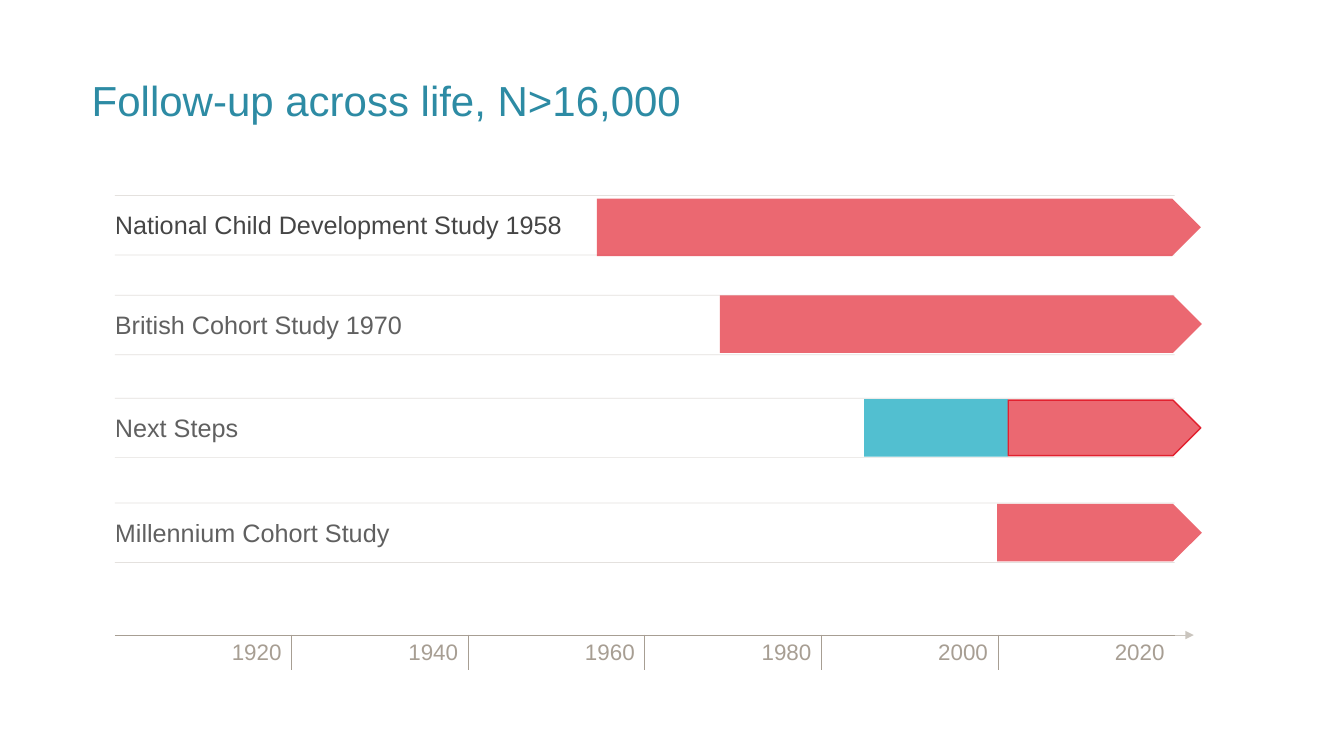
from dataclasses import dataclass

from lxml.etree import SubElement
from pptx import Presentation
from pptx.dml.color import RGBColor
from pptx.enum.shapes import MSO_CONNECTOR, MSO_SHAPE
from pptx.enum.text import MSO_ANCHOR, MSO_AUTO_SIZE, PP_ALIGN
from pptx.oxml import parse_xml
from pptx.oxml.ns import nsdecls, qn
from pptx.util import Inches, Pt


@dataclass(frozen=True)
class Theme:
    font: str = "Arial"
    title: str = "2D8BA4"
    first_label: str = "000000"
    label: str = "262626"
    rule: str = "A79E93"
    arrow: str = "CAC5BE"
    followed: str = "E2212F"
    earlier: str = "00A1BA"
    title_size: int = 30
    label_size: int = 18
    year_size: int = 16
    label_opacity: int = 73
    bar_opacity: int = 68
    rule_opacity: int = 30
    hairline: float = 0.5


@dataclass(frozen=True)
class Bar:
    left: float
    top: float
    width: float
    height: float = 0.57
    color: str = Theme.followed
    outlined: bool = False
    pointed: bool = True


@dataclass(frozen=True)
class Study:
    name: str
    top: float
    bars: tuple[Bar, ...]
    label_color: str = Theme.label


THEME = Theme()
AXIS_LEFT, AXIS_RIGHT, AXIS_TOP = 1.14, 11.65, 6.3
ROW_HEIGHT = 0.59
LABEL_OFFSET = 0.14
YEARS = range(1920, 2021, 20)
STUDIES = (
    Study("National Child Development Study 1958", 1.94,
          (Bar(5.92, 1.97, 5.99),), THEME.first_label),
    Study("British Cohort Study 1970", 2.93, (Bar(7.14, 2.93, 4.78),)),
    Study("Next Steps", 3.95,
          (Bar(8.57, 3.96, 1.43, color=THEME.earlier, pointed=False),
           Bar(10, 3.97, 1.91, height=0.55, outlined=True))),
    Study("Millennium Cohort Study", 4.99, (Bar(9.89, 5, 2.03),)),
)


def set_opacity(element, percent: int) -> None:
    for color in element.iter(qn("a:srgbClr")):
        SubElement(color, qn("a:alpha"), val=str(percent * 1000))


def write(frame, text: str, *, size: int, color: str, align=PP_ALIGN.LEFT,
          anchor=MSO_ANCHOR.TOP, spacing: float = 1.0) -> None:
    frame.word_wrap = True
    frame.auto_size = MSO_AUTO_SIZE.NONE
    frame.vertical_anchor = anchor
    frame.margin_left = frame.margin_right = 0
    frame.margin_top = frame.margin_bottom = 0
    write_paragraph(frame.paragraphs[0], text, size=size, color=color,
                    align=align, spacing=spacing)


def write_paragraph(paragraph, text: str, *, size: int, color: str, align,
                    spacing: float = 1.0) -> None:
    paragraph.alignment = align
    paragraph.line_spacing = spacing
    run = paragraph.add_run()
    run.text = text
    run.font.name = THEME.font
    run.font.size = Pt(size)
    run.font.color.rgb = RGBColor.from_string(color)


def draw_rule(slide, left: float, right: float, top: float, color: str,
              opacity: int = 100, arrow: bool = False) -> None:
    rule = slide.shapes.add_connector(MSO_CONNECTOR.STRAIGHT, Inches(left),
                                      Inches(top), Inches(right), Inches(top))
    rule.line.width = Pt(THEME.hairline)
    rule.line.color.rgb = RGBColor.from_string(color)
    properties = rule.element.spPr
    if opacity < 100:
        set_opacity(properties, opacity)
    if arrow:
        SubElement(properties.find(qn("a:ln")), qn("a:tailEnd"), type="triangle")
    SubElement(properties, qn("a:effectLst"))


def draw_bar(slide, bar: Bar) -> None:
    period = slide.shapes.add_shape(MSO_SHAPE.PENTAGON, Inches(bar.left), Inches(bar.top),
                                    Inches(bar.width), Inches(bar.height))
    period.shadow.inherit = False
    if not bar.pointed:
        period.adjustments[0] = 0
    period.fill.solid()
    period.fill.fore_color.rgb = RGBColor.from_string(bar.color)
    set_opacity(period.element.spPr, THEME.bar_opacity)
    if bar.outlined:
        period.line.color.rgb = RGBColor.from_string(bar.color)
        period.line.width = Pt(1)
    else:
        period.line.fill.background()


def draw_study(slide, study: Study) -> None:
    for top in (study.top, study.top + ROW_HEIGHT):
        draw_rule(slide, AXIS_LEFT, AXIS_RIGHT, top, THEME.rule, THEME.rule_opacity)
    label = slide.shapes.add_textbox(Inches(AXIS_LEFT), Inches(study.top + LABEL_OFFSET),
                                     Inches(6.68), Inches(0.3))
    write(label.text_frame, study.name, size=THEME.label_size, color=study.label_color)
    set_opacity(label.element, THEME.label_opacity)
    for bar in study.bars:
        draw_bar(slide, bar)


def set_borders(cell, visible: str) -> None:
    properties = cell._tc.get_or_add_tcPr()
    for position, side in enumerate("LRTB"):
        paint = (f'<a:solidFill><a:srgbClr val="{THEME.rule}"/></a:solidFill>'
                 if side in visible else "<a:noFill/>")
        properties.insert(position, parse_xml(
            f'<a:ln{side} {nsdecls("a")} w="{Pt(THEME.hairline)}">{paint}</a:ln{side}>'))


def draw_axis(slide) -> None:
    axis = slide.shapes.add_table(1, len(YEARS), Inches(AXIS_LEFT), Inches(AXIS_TOP),
                                  Inches(AXIS_RIGHT - AXIS_LEFT), Inches(0.35)).table
    axis.first_row = axis.horz_banding = False
    for column, year in enumerate(YEARS):
        cell = axis.cell(0, column)
        cell.fill.background()
        write_paragraph(cell.text_frame.paragraphs[0], str(year), size=THEME.year_size,
                        color=THEME.rule, align=PP_ALIGN.RIGHT)
        left = "L" if column > 0 else ""
        right = "R" if column < len(YEARS) - 1 else ""
        set_borders(cell, "T" + left + right)
    draw_rule(slide, AXIS_RIGHT, 11.84, AXIS_TOP, THEME.arrow, arrow=True)


def main() -> None:
    deck = Presentation()
    deck.slide_width, deck.slide_height = Inches(13.33), Inches(7.5)
    slide = deck.slides.add_slide(deck.slide_layouts[5])

    # Title
    heading = slide.shapes.title
    heading.left, heading.top = Inches(0.91), Inches(0.53)
    heading.width, heading.height = Inches(9.96), Inches(0.98)
    write(heading.text_frame, "Follow-up across life, N>16,000", size=THEME.title_size,
          color=THEME.title, anchor=MSO_ANCHOR.MIDDLE, spacing=0.9)

    # Year axis and study timelines
    draw_axis(slide)
    for study in STUDIES:
        draw_study(slide, study)

    deck.save("out.pptx")


if __name__ == "__main__":
    main()
